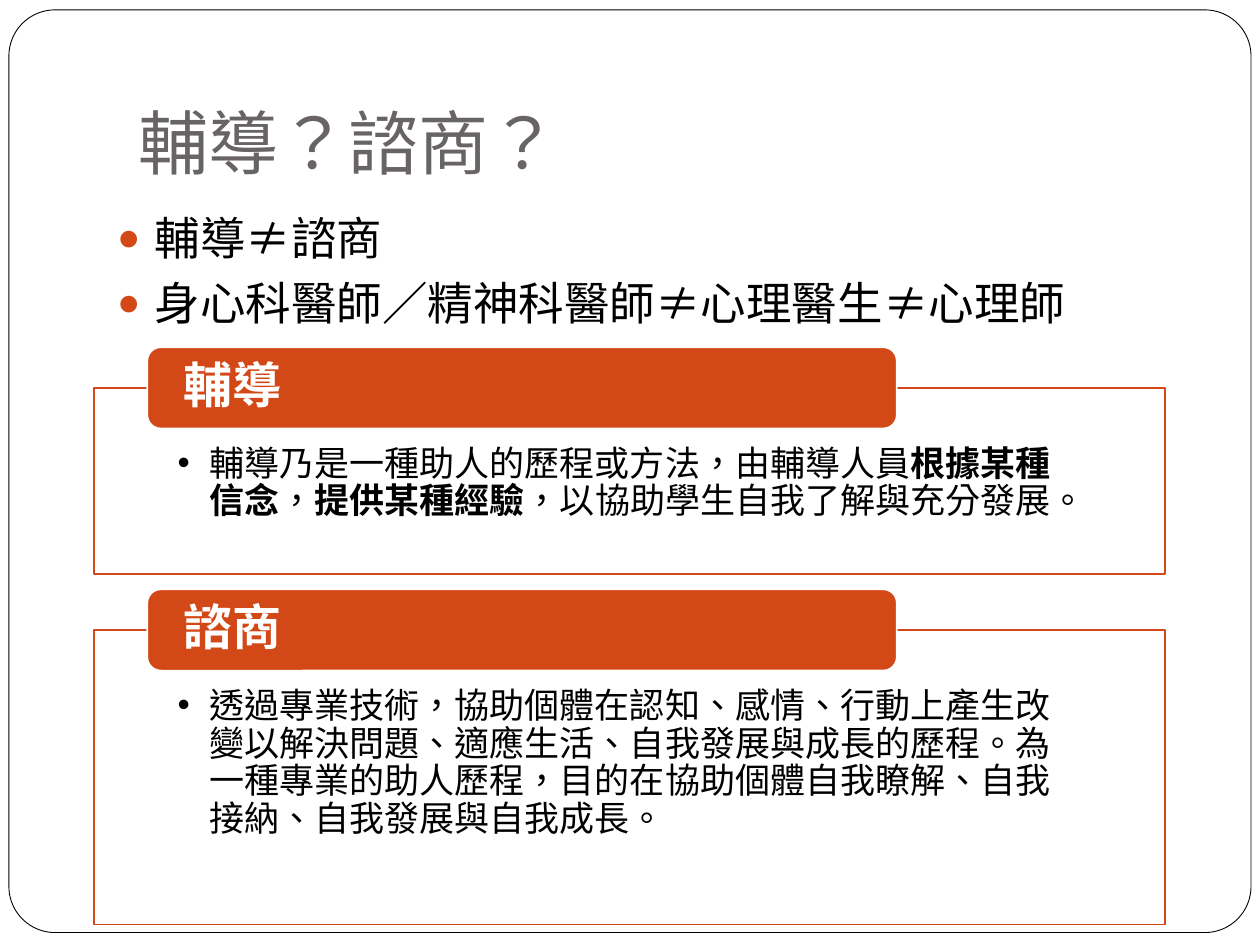
from dataclasses import dataclass

from lxml.etree import SubElement
from pptx import Presentation
from pptx.dml.color import RGBColor
from pptx.enum.lang import MSO_LANGUAGE_ID
from pptx.enum.shapes import MSO_SHAPE
from pptx.enum.text import MSO_ANCHOR, MSO_AUTO_SIZE, PP_ALIGN
from pptx.oxml.ns import qn
from pptx.util import Cm, Pt

COLORS = {"white": "FFFFFF", "black": "000000", "gray": "696464", "accent": "D34817"}
BOX_LEFT, BOX_WIDTH, BOX_GAP = 1.9, 21.59, 1.12
HEADER_LEFT, HEADER_WIDTH, HEADER_HEIGHT = 2.97, 15.11, 1.64


@dataclass
class Definition:
    term: str
    runs: list[tuple[str, bool]]  # wording, bold
    height: float


DEFINITIONS = [
    Definition("輔導", [
        ("輔導乃是一種助人的歷程或方法，由輔導人員", False),
        ("根據某種信念", True),
        ("，", False),
        ("提供某種經驗", True),
        ("，以協助學生自我了解與充分發展。", False),
    ], 3.76),
    Definition("諮商", [
        ("透過專業技術，協助個體在認知、感情、行動上產生改變以解決問題、適應生活、"
         "自我發展與成長的歷程。為一種專業的助人歷程，目的在協助個體自我瞭解、"
         "自我接納、自我發展與自我成長。", False),
    ], 5.94),
]
POINTS = ["輔導≠諮商", "身心科醫師／精神科醫師≠心理醫生≠心理師"]


def rgb(name: str) -> RGBColor:
    return RGBColor.from_string(COLORS[name])


def add_run(p, text: str, size: float, color: str, bold: bool = False, font: str = "Arial") -> None:
    r = p.add_run()
    r.text = text
    r.font.name, r.font.size, r.font.bold = font, Pt(size), bold
    r.font.color.rgb = rgb(color)
    r.font.language_id = MSO_LANGUAGE_ID.TRADITIONAL_CHINESE


def set_frame(tf, anchor, left: float, top: float, right: float, bottom: float) -> None:
    tf.word_wrap = True
    tf.auto_size = MSO_AUTO_SIZE.NONE
    tf.vertical_anchor = anchor
    tf.margin_left, tf.margin_top = Cm(left), Cm(top)
    tf.margin_right, tf.margin_bottom = Cm(right), Cm(bottom)


def set_bullet(p, char: str, indent: float, color: str, percent: int = 100) -> None:
    pPr = p._p.get_or_add_pPr()
    pPr.set("marL", str(Cm(indent)))
    pPr.set("indent", str(-Cm(indent)))
    clr = SubElement(pPr, qn("a:buClr"))
    SubElement(clr, qn("a:srgbClr"), val=COLORS[color])
    SubElement(pPr, qn("a:buSzPct"), val=str(percent * 1000))
    SubElement(pPr, qn("a:buFont"), typeface="Arial")
    SubElement(pPr, qn("a:buChar"), char=char)


def add_panel(s, kind, left: float, top: float, width: float, height: float,
              fill: str, line: str, weight: float):
    sp = s.shapes.add_shape(kind, Cm(left), Cm(top), Cm(width), Cm(height))
    sp.shadow.inherit = False
    sp.fill.solid()
    sp.fill.fore_color.rgb = rgb(fill)
    sp.line.color.rgb = rgb(line)
    sp.line.width = Pt(weight)
    return sp


def add_definition(s, item: Definition, top: float) -> None:
    # Outlined box with the explanation
    box = add_panel(s, MSO_SHAPE.RECTANGLE, BOX_LEFT, top, BOX_WIDTH, item.height,
                    "white", "accent", 1)
    tf = box.text_frame
    set_frame(tf, MSO_ANCHOR.TOP, 1.68, 1.17, 1.68, 0.41)
    p = tf.paragraphs[0]
    p.alignment, p.line_spacing = PP_ALIGN.LEFT, 0.9
    set_bullet(p, "•", 0.64, "black")
    for text, bold in item.runs:
        add_run(p, text, 20, "black", bold)

    # Header centred on the box's top edge
    header = add_panel(s, MSO_SHAPE.ROUNDED_RECTANGLE, HEADER_LEFT, top - HEADER_HEIGHT / 2,
                       HEADER_WIDTH, HEADER_HEIGHT, "accent", "white", 1)
    tf = header.text_frame
    set_frame(tf, MSO_ANCHOR.MIDDLE, 0.66, 0, 0.66, 0)
    p = tf.paragraphs[0]
    p.alignment, p.line_spacing = PP_ALIGN.LEFT, 0.9
    add_run(p, item.term, 28, "white", True)


def main() -> None:
    prs = Presentation()
    prs.slide_width, prs.slide_height = Cm(25.4), Cm(19.05)
    s = prs.slides.add_slide(prs.slide_layouts[5])

    # Rounded page frame, behind the title
    frame = add_panel(s, MSO_SHAPE.ROUNDED_RECTANGLE, 0.18, 0.2, 25.04, 18.6,
                      "white", "black", 0.5)
    frame.adjustments[0] = 0.05
    title = s.shapes.title
    title.element.addprevious(frame.element)

    # Title
    title.left, title.top, title.width, title.height = Cm(2.54), Cm(0.76), Cm(21.59), Cm(3.18)
    set_frame(title.text_frame, MSO_ANCHOR.BOTTOM, 0.25, 0.13, 0.25, 0.25)
    p = title.text_frame.paragraphs[0]
    p.alignment = PP_ALIGN.LEFT
    add_run(p, "輔導？諮商？", 40, "gray", font="Karla")

    # Bullet points
    tf = s.shapes.add_textbox(Cm(2.11), Cm(4.11), Cm(21.59), Cm(12.7)).text_frame
    set_frame(tf, MSO_ANCHOR.TOP, 0.25, 0.13, 0.25, 0.13)
    for i, text in enumerate(POINTS):
        p = tf.add_paragraph() if i else tf.paragraphs[0]
        p.space_before = Pt(5.8)
        set_bullet(p, "●", 0.76, "accent", 85)
        add_run(p, text, 26, "black")

    # Definitions, stacked with an equal gap
    top = 7.82
    for item in DEFINITIONS:
        add_definition(s, item, top)
        top += item.height + BOX_GAP

    prs.save("out.pptx")


if __name__ == "__main__":
    main()
